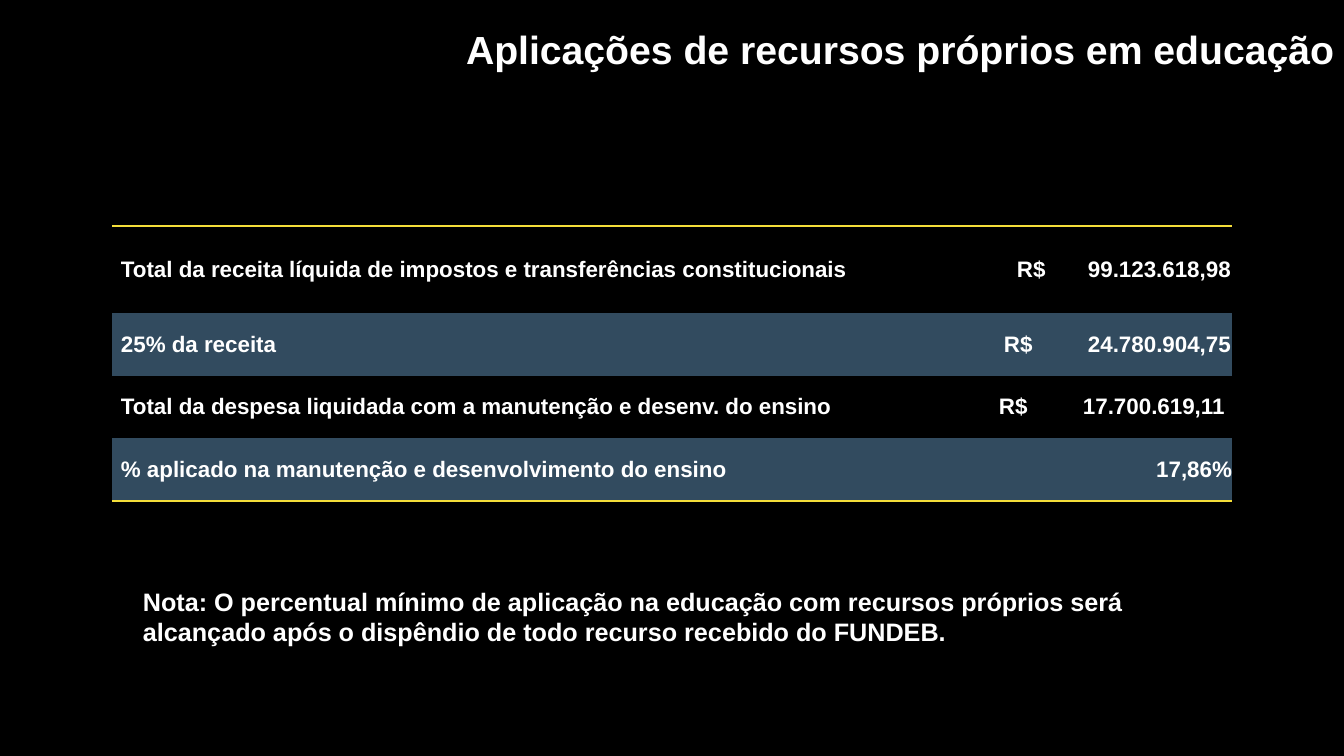
from dataclasses import dataclass

from lxml import etree
from pptx import Presentation
from pptx.dml.color import RGBColor
from pptx.enum.text import MSO_ANCHOR, MSO_AUTO_SIZE, PP_ALIGN
from pptx.oxml.ns import qn
from pptx.util import Pt

LEFT, RIGHT = PP_ALIGN.LEFT, PP_ALIGN.RIGHT
MIDDLE = MSO_ANCHOR.MIDDLE
GROW = MSO_AUTO_SIZE.SHAPE_TO_FIT_TEXT
SLIDE_W, SLIDE_H = 1344, 756
EMU_PER_PX = 12192000 / SLIDE_W
NO_STYLE = "{2D5ABB26-0587-4C30-8999-92F81FD0307C}"


@dataclass(frozen=True)
class Theme:
    font: str = "Arial"
    background: str = "000000"
    text: str = "FFFFFF"
    band: str = "324B5F"
    rule: str = "F4DE3A"
    title: int = 28
    note: int = 18
    cell: int = 16


def px(n):
    return round(n * EMU_PER_PX)


def assign(target, values):
    for name, value in values.items():
        setattr(target, name, value)


class Deck:
    """Holds the theme and the current slide, and draws its elements."""

    def __init__(self, theme):
        self.theme = theme
        self.prs = Presentation()
        assign(self.prs, {"slide_width": px(SLIDE_W), "slide_height": px(SLIDE_H)})
        self.s = self.prs.slides.add_slide(self.prs.slide_layouts[6])
        self.paint(self.s.background.fill, theme.background)

    def paint(self, fill, color):
        fill.solid()
        fill.fore_color.rgb = RGBColor.from_string(color)

    def add_run(self, p, text, size, align=LEFT):
        p.alignment = align
        r = p.add_run()
        r.text = text
        assign(r.font, {"name": self.theme.font, "size": Pt(size), "bold": True})
        r.font.color.rgb = RGBColor.from_string(self.theme.text)

    def text(self, box, text, size, align=LEFT):
        sp = self.s.shapes.add_textbox(*map(px, box))
        tf = sp.text_frame
        assign(tf, {"word_wrap": True, "auto_size": GROW})
        self.add_run(tf.paragraphs[0], text, size, align)

    def border(self, cell, side):
        ln = etree.Element(qn(f"a:{side}"), w=str(Pt(1)))
        fill = etree.SubElement(ln, qn("a:solidFill"))
        etree.SubElement(fill, qn("a:srgbClr"), val=self.theme.rule)
        cell._tc.get_or_add_tcPr().insert(0, ln)

    def tab_stop(self, p, pos):
        tabs = etree.SubElement(p._p.get_or_add_pPr(), qn("a:tabLst"))
        etree.SubElement(tabs, qn("a:tab"), pos=str(px(pos)), algn="l")

    def cell(self, cell, text, banded, inset=0, tab=None, align=LEFT):
        assign(cell, {"margin_left": px(inset), "margin_right": 0, "margin_top": 0,
                      "margin_bottom": 0, "vertical_anchor": MIDDLE})
        if banded:
            self.paint(cell.fill, self.theme.band)
        else:
            cell.fill.background()
        p = cell.text_frame.paragraphs[0]
        if tab:
            self.tab_stop(p, tab)
        self.add_run(p, text, self.theme.cell, align)

    def table(self, left, top, widths, heights, rows):
        box = map(px, (left, top, sum(widths), sum(heights)))
        tbl = self.s.shapes.add_table(len(rows), len(widths), *box).table
        assign(tbl, {"first_row": False, "horz_banding": False})
        tbl._tbl.tblPr.find(qn("a:tableStyleId")).text = NO_STYLE
        for col, width in zip(tbl.columns, widths):
            col.width = px(width)
        for i, (height, (label, value, value_format)) in enumerate(zip(heights, rows)):
            tbl.rows[i].height = px(height)
            banded = i % 2 == 1
            self.cell(tbl.cell(i, 0), label, banded, inset=9)
            self.cell(tbl.cell(i, 1), value, banded, **value_format)
        for j in range(len(widths)):
            self.border(tbl.cell(0, j), "lnT")
            self.border(tbl.cell(len(rows) - 1, j), "lnB")


def main():
    theme = Theme()
    deck = Deck(theme)
    deck.text((269, 20, 1075, 57), "Aplicações de recursos próprios em educação",
              theme.title, RIGHT)
    deck.table(112, 226, (775, 345), (87, 63, 62, 63), [
        ("Total da receita líquida de impostos e transferências constitucionais",
         "R$\t99.123.618,98", {"inset": 130, "tab": 71}),
        ("25% da receita",
         "R$\t24.780.904,75", {"inset": 117, "tab": 84}),
        ("Total da despesa liquidada com a manutenção e desenv. do ensino",
         "R$\t17.700.619,11", {"inset": 112, "tab": 84}),
        ("% aplicado na manutenção e desenvolvimento do ensino",
         "17,86%", {"align": RIGHT}),
    ])
    deck.text((133, 581, 1075, 72),
              "Nota: O percentual mínimo de aplicação na educação com recursos próprios "
              "será alcançado após o dispêndio de todo recurso recebido do FUNDEB.",
              theme.note)
    deck.prs.save("out.pptx")


if __name__ == "__main__":
    main()
